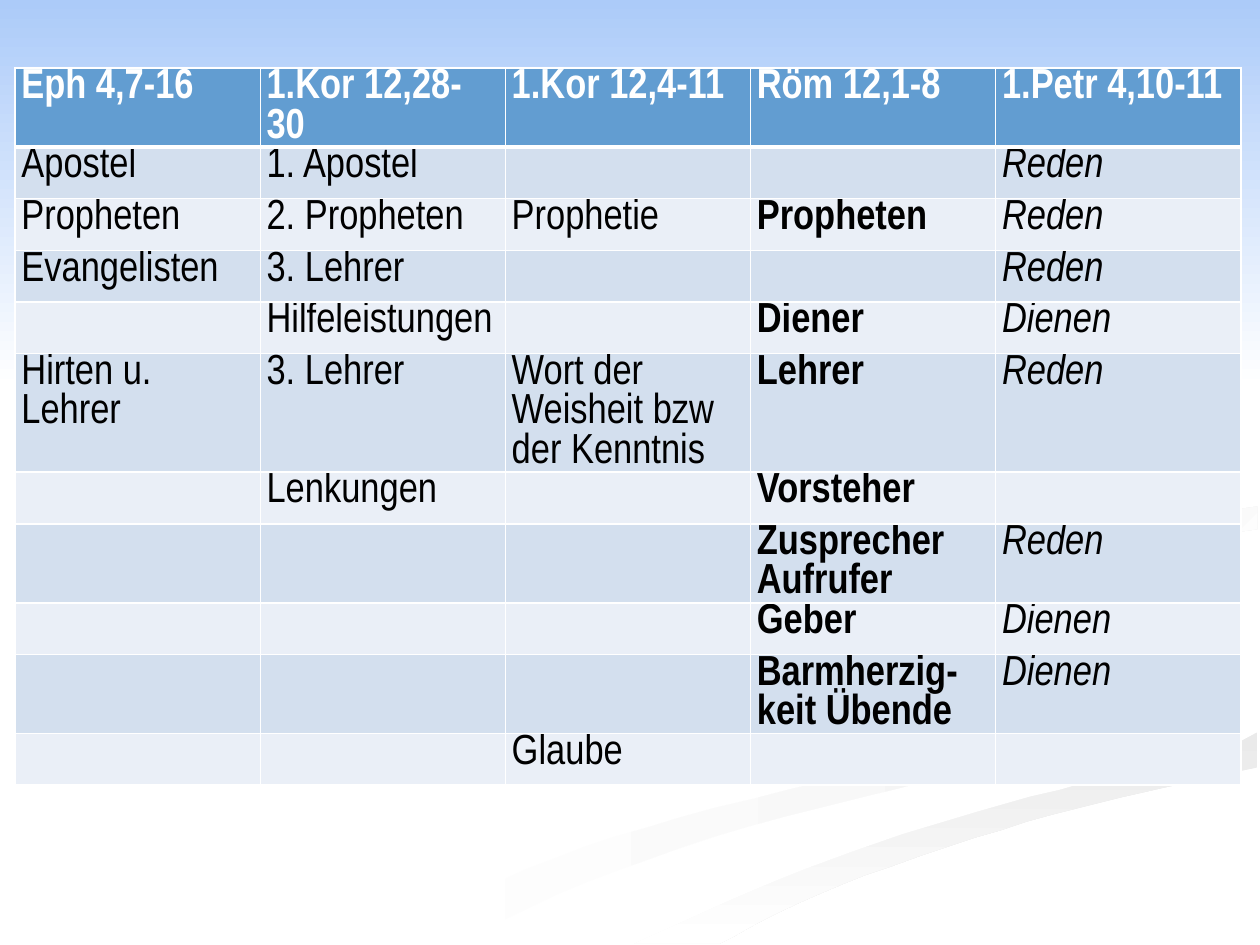
import pptx
import pptx.dml.color
import pptx.enum.shapes
import pptx.oxml
import pptx.util
from pptx.util import Inches, Pt

DRAWING_NAMESPACE = "http://schemas.openxmlformats.org/drawingml/2006/main"
WHITE = "FFFFFF"
STEPS_PER_SPAN = 5
UNITS_PER_INCH = 100


def color(hex_string):
    return pptx.dml.color.RGBColor.from_string(hex_string)


def smooth_edge(anchors):
    """Return points on a Catmull-Rom curve that passes through the anchors."""
    padded = [anchors[0], *anchors, anchors[-1]]
    points = []
    for before, start, end, after in zip(padded, padded[1:], padded[2:], padded[3:]):
        for step in range(STEPS_PER_SPAN):
            t = step / STEPS_PER_SPAN
            points.append(tuple(
                b + (c - a) * t / 2
                + (2 * a - 5 * b + 4 * c - d) * t**2 / 2
                + (3 * b - a - 3 * c + d) * t**3 / 2
                for a, b, c, d in zip(before, start, end, after)
            ))
    return points + [anchors[-1]]


deck = pptx.Presentation()
deck.slide_width = Inches(10)
deck.slide_height = Inches(7.5)
page = deck.slides.add_slide(deck.slide_layouts[6])
page.background.fill.solid()
page.background.fill.fore_color.rgb = color(WHITE)

# Each ribbon runs out along one edge and back along the other (inches).
# Neighbouring ribbons share the crest of the front sweep.
front_crest = [(5.03, 7.49), (5.99, 7.06), (6.96, 6.69), (7.97, 6.38), (9.03, 6.1), (9.98, 5.81)]
ribbons = {
    "long ribbon": {
        "gradient": ("FFFFFF", "F5F5F5", 0),
        "out": [(5.75, 4.59), (5.87, 4.81), (6.61, 5.13), (7.45, 5.38), (7.95, 5.61),
                (7.97, 5.88), (7.4, 6.18), (5.94, 6.56), (4.66, 7), (3.61, 7.49)],
        "back": [(3, 7.49), (4.17, 6.9), (5.39, 6.49), (6.84, 6.13), (7.67, 5.87),
                 (7.85, 5.62), (7.41, 5.39), (6.31, 5.05), (5.76, 4.8), (5.75, 4.59)],
    },
    "middle curl": {
        "gradient": ("FFFFFF", "F5F5F5", 45),
        "out": [(7.24, 4.64), (7.45, 4.9), (8.11, 5.15), (8.88, 5.35), (9.35, 5.57),
                (9.41, 5.81), (8.94, 6.05)],
        "back": [(8.94, 6.05), (9.17, 5.85), (9, 5.57), (8.38, 5.36), (7.55, 5.05), (7.24, 4.64)],
    },
    "front sweep": {
        "gradient": ("EAEAEA", "FFFFFF", 90),
        "out": front_crest,
        "back": [(9.98, 6.09), (8.61, 6.4), (7.52, 6.72), (6.49, 7.1), (5.71, 7.49)],
    },
    "white sweep": {
        "gradient": ("FFFFFF", "FFFFFF", 0),
        "out": [(9.99, 3.87), (9.2, 4.01), (8.3, 4.15), (7.55, 4.32), (7.25, 4.64),
                (7.59, 4.98), (8.51, 5.24), (9.31, 5.53), (9.36, 5.87), (8.43, 6.18),
                (7.04, 6.55), (5.73, 7.03), (4.77, 7.49)],
        "back": front_crest + [(9.99, 5.38), (8.66, 5.09), (7.94, 4.8), (7.86, 4.53),
                               (8.65, 4.24), (9.99, 4.02)],
    },
    "upper sweep": {
        "gradient": ("F1F1F1", "FFFFFF", 45),
        "out": [(9.98, 4.02), (8.98, 4.18), (8.1, 4.37), (7.81, 4.6), (7.91, 4.78), (8.26, 4.96)],
        "back": [(8.26, 4.96), (8.05, 4.76), (8.28, 4.53), (8.96, 4.35), (9.98, 4.2)],
    },
    "upper curl": {
        "gradient": ("EDEDED", "FFFFFF", 45),
        "out": [(7.62, 2.33), (8.43, 2.75), (8.92, 3.3), (8.76, 3.78), (8.07, 4.07),
                (6.83, 4.3), (6.06, 4.52), (5.97, 4.8), (6.22, 5)],
        "back": [(6.22, 5), (5.78, 4.68), (6.05, 4.33), (7.04, 4.09), (8.18, 3.86),
                 (8.82, 3.54), (8.82, 3.13), (8.26, 2.66), (7.62, 2.33)],
    },
}

background_shapes = []
for ribbon in ribbons.values():
    outline = [
        (round(x * UNITS_PER_INCH), round(y * UNITS_PER_INCH))
        for x, y in smooth_edge(ribbon["out"]) + smooth_edge(ribbon["back"])
    ]
    builder = page.shapes.build_freeform(*outline[0], scale=Inches(1) / UNITS_PER_INCH)
    builder.add_line_segments(outline[1:], close=True)
    background_shapes.append((builder.convert_to_shape(), ribbon["gradient"]))

sky = page.shapes.add_shape(
    pptx.enum.shapes.MSO_SHAPE.RECTANGLE, 0, 0, deck.slide_width, Inches(3.08)
)
background_shapes.append((sky, ("ACCBF9", "FFFFFF", 90)))

for shape, (first_color, last_color, clockwise_angle) in background_shapes:
    shape.shadow.inherit = False
    shape.line.fill.background()
    if first_color == last_color:
        shape.fill.solid()
        shape.fill.fore_color.rgb = color(first_color)
        continue
    shape.fill.gradient()
    shape.fill.gradient_angle = (360 - clockwise_angle) % 360
    first_stop, last_stop = shape.fill.gradient_stops
    first_stop.color.rgb = color(first_color)
    last_stop.color.rgb = color(last_color)

# One column for each Bible passage, one row for each gift or ministry.
rows = [
    ("Eph 4,7-16", "1.Kor 12,28-30", "1.Kor 12,4-11", "Röm 12,1-8", "1.Petr 4,10-11"),
    ("Apostel", "1. Apostel", "", "", "Reden"),
    ("Propheten", "2. Propheten", "Prophetie", "Propheten", "Reden"),
    ("Evangelisten", "3. Lehrer", "", "", "Reden"),
    ("", "Hilfeleistungen", "", "Diener", "Dienen"),
    ("Hirten u. Lehrer", "3. Lehrer", "Wort der Weisheit bzw der Kenntnis", "Lehrer", "Reden"),
    ("", "Lenkungen", "", "Vorsteher", ""),
    ("", "", "", "Zusprecher\nAufrufer", "Reden"),
    ("", "", "", "Geber", "Dienen"),
    ("", "", "", "Barmherzig-keit Übende", "Dienen"),
    ("", "", "Glaube", "", ""),
]
header_fill, odd_fill, even_fill = "629DD1", "D3DFEE", "EAEFF7"
bold_column, italic_column = 3, 4
border_sides = "LRTB"
thin_border, header_border = Pt(1), Pt(3)
row_height = Inches(0.41)

table = page.shapes.add_table(
    len(rows), len(rows[0]), Inches(0.12), Inches(0.54), Inches(9.73), row_height * len(rows)
).table

for row_index, texts in enumerate(rows):
    table.rows[row_index].height = row_height
    is_header = row_index == 0
    row_fill = header_fill if is_header else odd_fill if row_index % 2 else even_fill
    for column_index, text in enumerate(texts):
        cell = table.cell(row_index, column_index)
        cell.margin_left = cell.margin_right = Inches(0.05)
        cell.margin_top = cell.margin_bottom = 0
        cell.fill.solid()
        cell.fill.fore_color.rgb = color(row_fill)

        for position, side in enumerate(border_sides):
            touches_header_edge = (row_index, side) in ((0, "B"), (1, "T"))
            width = header_border if touches_header_edge else thin_border
            border = pptx.oxml.parse_xml(
                f'<a:ln{side} xmlns:a="{DRAWING_NAMESPACE}" w="{width}"><a:solidFill>'
                f'<a:srgbClr val="{WHITE}"/></a:solidFill></a:ln{side}>'
            )
            cell._tc.get_or_add_tcPr().insert(position, border)

        cell.text_frame.text = text
        for para in cell.text_frame.paragraphs:
            for span in para.runs:
                span.font.name = "Arial Narrow"
                span.font.size = Pt(24)
                span.font.bold = is_header or column_index == bold_column
                span.font.italic = not is_header and column_index == italic_column
                span.font.color.rgb = color(WHITE if is_header else "000000")

deck.save("out.pptx")
